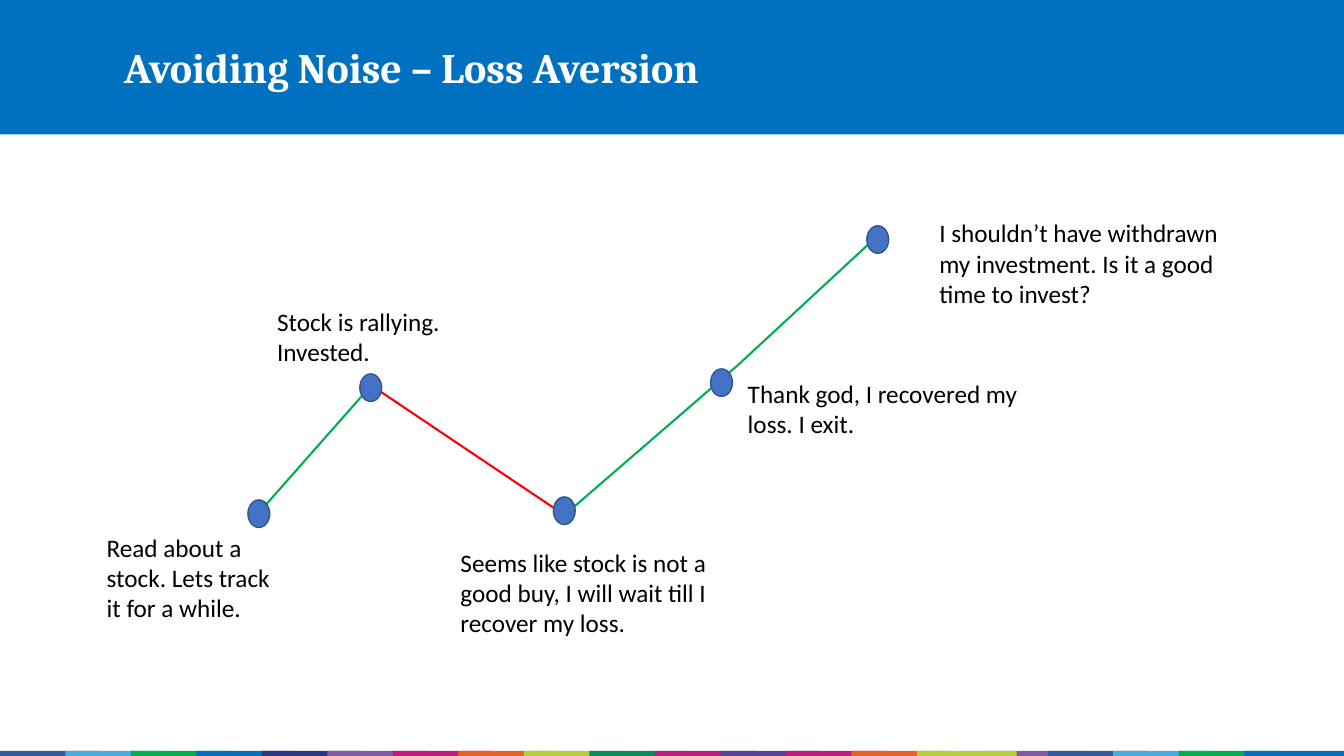
from lxml.etree import SubElement
from pptx import Presentation
from pptx.dml.color import RGBColor
from pptx.enum.shapes import MSO_CONNECTOR, MSO_SHAPE
from pptx.enum.text import MSO_AUTO_SIZE
from pptx.oxml.ns import qn
from pptx.util import Inches, Pt

COLORS = {
    "navy": "31599B", "sky": "41AFDE", "green": "00B050", "blue": "0070C0",
    "indigo": "2B3781", "purple": "805DA3", "magenta": "C21A7D", "orange": "E76121",
    "lime": "B8CE37", "teal": "068D5C", "pink": "C11B7F", "violet": "564394",
    "dot": "4472C4", "dot_edge": "325491", "loss": "FF0000",
    "white": "FFFFFF", "black": "000000",
}

prs = Presentation()
prs.slide_width, prs.slide_height = Inches(40 / 3), Inches(7.5)
CELL = prs.slide_width / 40
slide = prs.slides.add_slide(prs.slide_layouts[6])


def add_filled(kind, col, row, cols, rows, color, edge=None):
    shape = slide.shapes.add_shape(kind, *[round(n * CELL) for n in (col, row, cols, rows)])
    shape.shadow.inherit = False
    shape.fill.solid()
    shape.fill.fore_color.rgb = RGBColor.from_string(COLORS[color])
    if edge:
        shape.line.color.rgb = RGBColor.from_string(COLORS[edge])
        shape.line.width = Pt(1)
    else:
        shape.line.fill.background()


def add_label(text, col, row, cols, rows, size, font, color, wrap=True, bold=False):
    label = slide.shapes.add_textbox(*[round(n * CELL) for n in (col, row, cols, rows)])
    frame = label.text_frame
    frame.word_wrap = wrap
    frame.auto_size = MSO_AUTO_SIZE.SHAPE_TO_FIT_TEXT
    frame.text = text
    run_font = frame.paragraphs[0].runs[0].font
    run_font.size, run_font.name, run_font.bold = Pt(size), font, bold
    run_font.color.rgb = RGBColor.from_string(COLORS[color])


stripe_colors = [
    "navy", "sky", "green", "blue", "indigo", "purple", "magenta", "orange", "lime", "teal",
    "pink", "violet", "magenta", "orange", "lime", "purple", "navy", "sky", "green", "blue",
]
stripe_cols = 2.97
stripe_step = (40 - stripe_cols) / (len(stripe_colors) - 1)
for slot in [*range(12), 15, 12, 13, 14, *range(16, 20)]:
    add_filled(MSO_SHAPE.RECTANGLE, slot * stripe_step, 22.35, stripe_cols, 0.15, stripe_colors[slot])

add_filled(MSO_SHAPE.RECTANGLE, 0, 0, 40, 4, "blue")
add_label("Avoiding Noise – Loss Aversion", 3.39, 1.08, 20.7, 1.83, 30, "Cambria", "white",
          wrap=False, bold=True)

price_path = [(7.59, 15.39), (11.05, 11.47), (16.8, 15.33), (21.96, 10.87), (26.28, 6.87)]
trends = ["green", "loss", "green", "green"]
for start, end, trend in zip(price_path, price_path[1:], trends):
    segment = slide.shapes.add_connector(
        MSO_CONNECTOR.STRAIGHT, *[round(n * CELL) for n in (*start, *end)])
    segment.line.color.rgb = RGBColor.from_string(COLORS[trend])
    segment.line.width = Pt(1.5)
    SubElement(segment._element.spPr, qn("a:effectLst"))

thoughts = [
    ("Seems like stock is not a good buy, I will wait till I recover my loss.", 13.41, 16.14, 8.79, 3.03),
    ("Thank god, I recovered my loss. I exit.", 21.96, 11.1, 8.79, 2.13),
    ("I shouldn’t have withdrawn my investment. Is it a good time to invest?", 27.66, 6.33, 9.36, 3.03),
    ("Stock is rallying. Invested.", 7.95, 8.97, 5.97, 2.13),
    ("Read about a stock. Lets track it for a while.", 2.88, 15.69, 5.97, 3.03),
]
for thought in thoughts:
    add_label(*thought, 18, "Calibri", "black")

for col, row in [(7.38, 14.88), (10.71, 11.13), (16.47, 14.79), (21.15, 10.98), (25.8, 6.72)]:
    add_filled(MSO_SHAPE.OVAL, col, row, 0.65, 0.82, "dot", "dot_edge")

prs.save("out.pptx")
